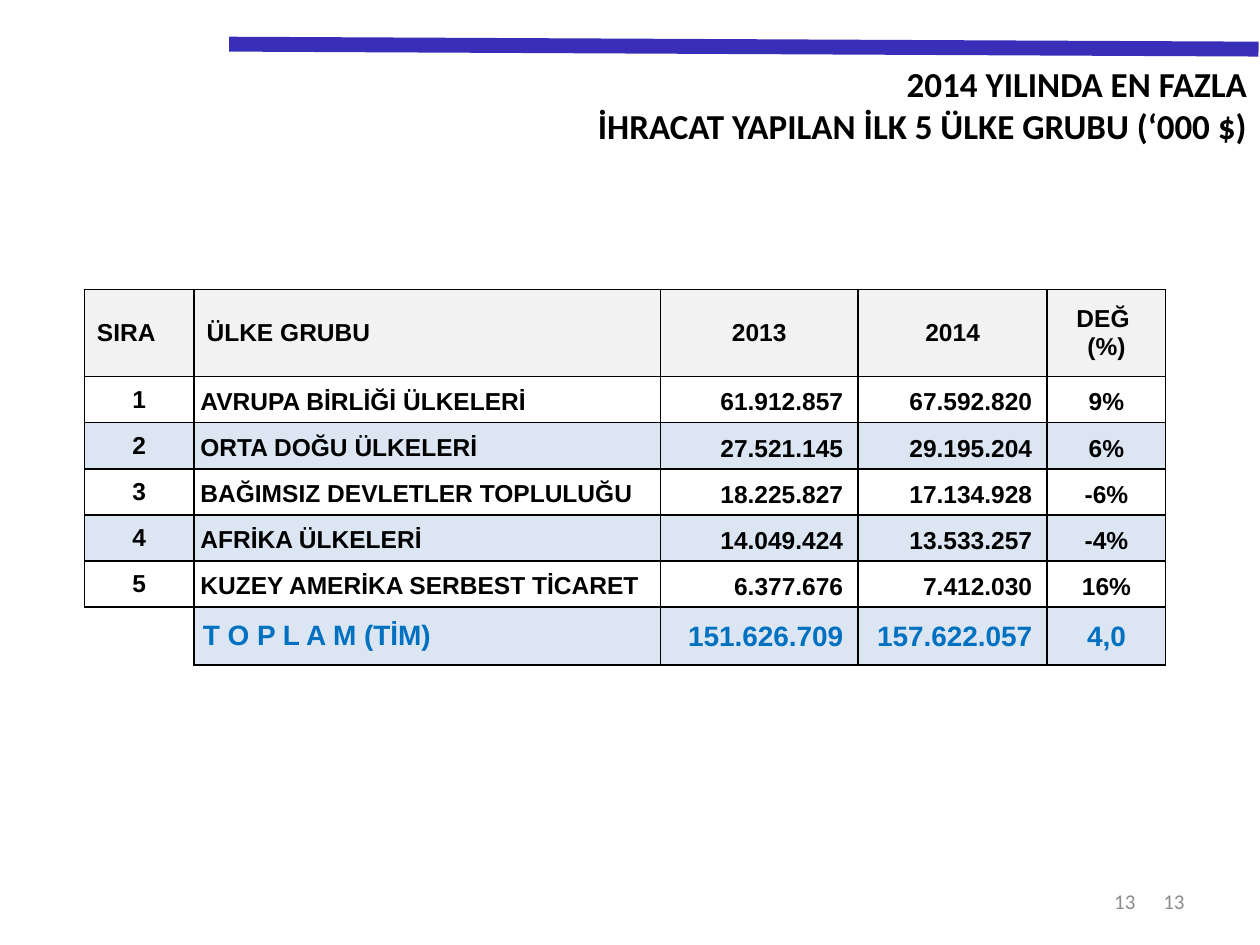
from lxml import etree
from pptx import Presentation
from pptx.dml.color import RGBColor
from pptx.enum.shapes import MSO_CONNECTOR
from pptx.enum.text import MSO_ANCHOR, PP_ALIGN
from pptx.oxml.ns import qn
from pptx.util import Cm, Pt

STRAIGHT = MSO_CONNECTOR.STRAIGHT
TOP, MIDDLE = MSO_ANCHOR.TOP, MSO_ANCHOR.MIDDLE
LEFT, CENTER, RIGHT = PP_ALIGN.LEFT, PP_ALIGN.CENTER, PP_ALIGN.RIGHT

BLACK = RGBColor(0x00, 0x00, 0x00)
GRAY = RGBColor(0x8C, 0x8C, 0x8C)
INDIGO = RGBColor(0x38, 0x2E, 0xB8)
BLUE = RGBColor(0x00, 0x70, 0xC0)
HEADER_FILL = RGBColor(0xF2, 0xF2, 0xF2)
BAND_FILL = RGBColor(0xDC, 0xE6, 0xF2)


def write_text(text_frame, text, size=14, font="Arial", color=BLACK, bold=True,
               align=LEFT, line_spacing=None):
    for index, line in enumerate(text.split("\n")):
        paragraph = text_frame.paragraphs[0] if index == 0 else text_frame.add_paragraph()
        paragraph.alignment = align
        paragraph.space_before = Pt(0)
        if line_spacing:
            paragraph.line_spacing = line_spacing
        run = paragraph.add_run()
        run.text = line
        run.font.name = font
        run.font.size = Pt(size)
        run.font.bold = bold
        run.font.color.rgb = color


def set_borders(cell, visible_sides):
    properties = cell._tc.get_or_add_tcPr()
    for side in "LRTB":
        border = etree.SubElement(properties, qn(f"a:ln{side}"), w=str(Pt(1)))
        if side in visible_sides:
            fill = etree.SubElement(border, qn("a:solidFill"))
            etree.SubElement(fill, qn("a:srgbClr"), val=str(BLACK))
        else:
            etree.SubElement(border, qn("a:noFill"))


presentation = Presentation()
presentation.slide_width = Cm(25.4)
presentation.slide_height = Cm(19.05)
slide = presentation.slides.add_slide(presentation.slide_layouts[5])

# Bar above the title
bar = slide.shapes.add_connector(STRAIGHT, Cm(4.62), Cm(0.89), Cm(25.37), Cm(0.99))
bar.line.color.rgb = INDIGO
bar.line.width = Pt(8.5)
etree.SubElement(bar._element.spPr, qn("a:effectLst"))

# Title
title = slide.shapes.title
title.left, title.top, title.width, title.height = Cm(2.69), Cm(1.14), Cm(22.71), Cm(1.96)
title.text_frame.vertical_anchor = TOP
write_text(title.text_frame,
           "2014 YILINDA EN FAZLA\nİHRACAT YAPILAN İLK 5 ÜLKE GRUBU (‘000 $)",
           size=20, font="Calibri", align=RIGHT)

# Page numbers
for left, width in ((18.21, 5.92), (17.81, 5.33)):
    page_number = slide.shapes.add_textbox(Cm(left), Cm(17.65), Cm(width), Cm(1.02))
    page_number.text_frame.word_wrap = True
    page_number.text_frame.vertical_anchor = MIDDLE
    write_text(page_number.text_frame, "13", size=12, font="Calibri", color=GRAY,
               bold=False, align=RIGHT)

# Export table
rows = [
    ("SIRA", "ÜLKE GRUBU", "2013", "2014", "DEĞ \n(%)"),
    ("1", "AVRUPA BİRLİĞİ ÜLKELERİ", "61.912.857", "67.592.820", "9%"),
    ("2", "ORTA DOĞU ÜLKELERİ", "27.521.145", "29.195.204", "6%"),
    ("3", "BAĞIMSIZ DEVLETLER TOPLULUĞU", "18.225.827", "17.134.928", "-6%"),
    ("4", "AFRİKA ÜLKELERİ", "14.049.424", "13.533.257", "-4%"),
    ("5", "KUZEY AMERİKA SERBEST TİCARET", "6.377.676", "7.412.030", "16%"),
    ("", "T O P L A M (TİM)", "151.626.709", "157.622.057", "4,0"),
]
column_widths = [2.21, 9.4, 3.99, 3.81, 2.39]
row_heights = [1.75] + [0.93] * 5 + [1.17]
header_alignments = [LEFT, LEFT, CENTER, CENTER, CENTER]
body_alignments = [CENTER, LEFT, RIGHT, RIGHT, CENTER]
# Left, top, right and bottom margins of body cells; None keeps the default
body_margins = [None, (0.13, 0, 0.13, 0), (0.03, 0.03, 0.3, 0),
                (0.03, 0.03, 0.3, 0), (0.03, 0.03, 0.03, 0)]
total_row = len(rows) - 1

table = slide.shapes.add_table(len(rows), len(column_widths), Cm(1.7), Cm(5.84),
                               Cm(sum(column_widths)), Cm(sum(row_heights))).table
table.first_row = False
table.horz_banding = False
for column, width in zip(table.columns, column_widths):
    column.width = Cm(width)
for row, height in zip(table.rows, row_heights):
    row.height = Cm(height)

for row_index, values in enumerate(rows):
    is_header = row_index == 0
    is_total = row_index == total_row
    alignments = header_alignments if is_header else body_alignments
    for column_index, value in enumerate(values):
        cell = table.cell(row_index, column_index)
        cell.vertical_anchor = MIDDLE
        set_borders(cell, "LRTB" if value else "RT")
        if value and (is_header or row_index % 2 == 0):
            cell.fill.solid()
            cell.fill.fore_color.rgb = HEADER_FILL if is_header else BAND_FILL
        else:
            cell.fill.background()
        if not value:
            continue
        margins = None if is_header else body_margins[column_index]
        if margins:
            (cell.margin_left, cell.margin_top,
             cell.margin_right, cell.margin_bottom) = map(Cm, margins)
        if is_total and column_index == 1:
            cell.margin_left = Cm(0.18)
        write_text(cell.text_frame, value, size=16 if is_total else 14,
                   color=BLUE if is_total else BLACK, align=alignments[column_index],
                   line_spacing=1.15 if margins and not is_total else None)

presentation.save("out.pptx")
